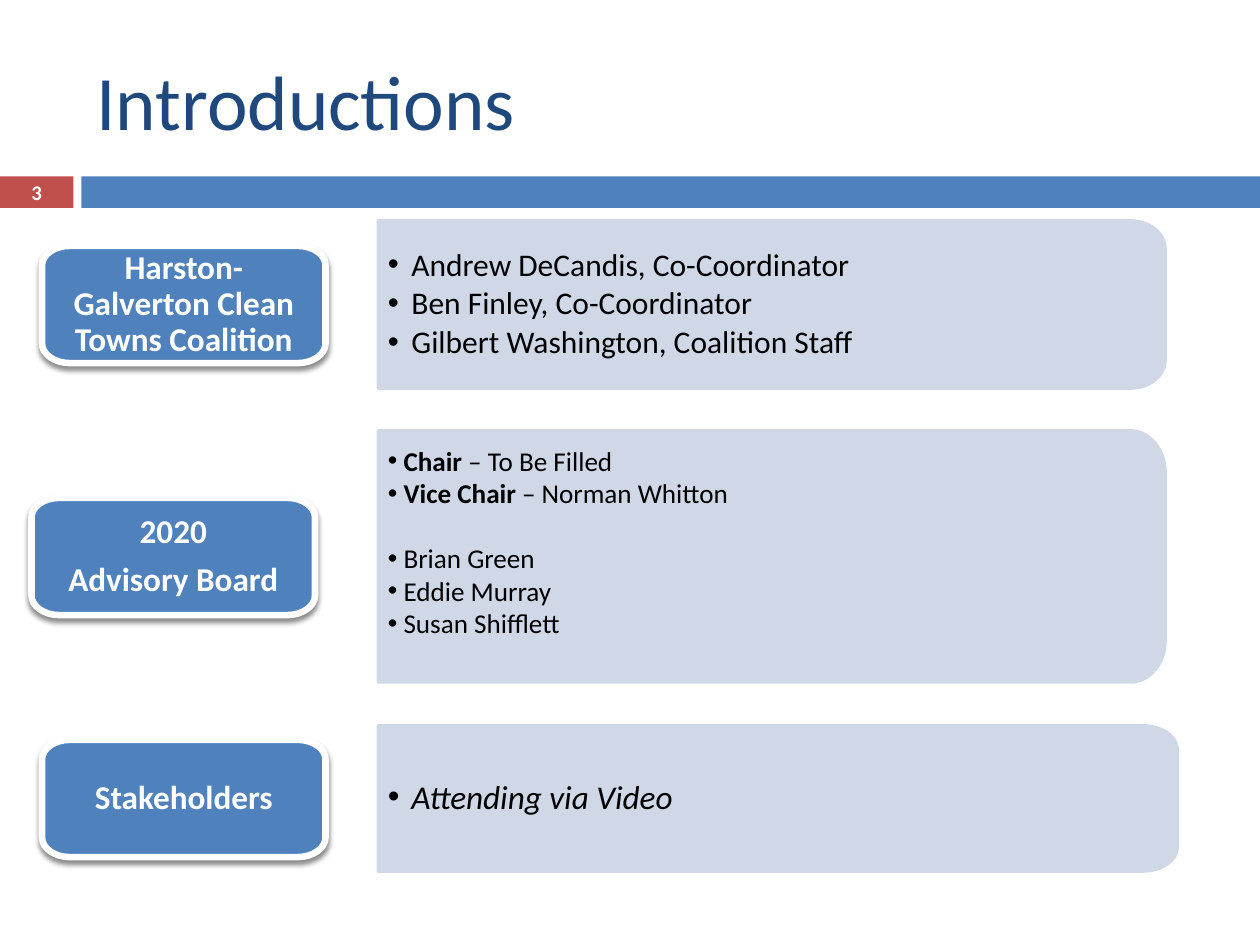
"""Build the Introductions slide with three labelled groups of people."""
from lxml.etree import SubElement
from pptx import Presentation
from pptx.dml.color import RGBColor
from pptx.enum.shapes import MSO_SHAPE as Preset
from pptx.enum.text import MSO_ANCHOR as Anchor, PP_ALIGN as Align
from pptx.oxml.ns import qn
from pptx.util import Pt

COLORS = {
    "title": "1F497D",
    "blue": "4F81BD",
    "red": "C0504D",
    "panel": "D0D8E8",
    "white": "FFFFFF",
    "black": "000000",
}
FONT = "Calibri"
BULLET_FONT = "Arial"
LABEL_SIZE = (162, 67)
PANEL_LEFT = 216
ARC = 0.55


def color(name):
    return RGBColor.from_string(COLORS[name])


def style_shape(shape, fill, line=None, width=0):
    shape.shadow.inherit = False
    shape.fill.solid()
    shape.fill.fore_color.rgb = color(fill)
    if line:
        shape.line.color.rgb = color(line)
        shape.line.width = Pt(width)
    else:
        shape.line.fill.background()


def style_text(frame, size, name, align=Align.LEFT, bold=False, italic=False):
    frame.word_wrap = True
    frame.vertical_anchor = Anchor.MIDDLE
    for para in frame.paragraphs:
        para.alignment = align
        for span in para.runs:
            span.font.name = FONT
            span.font.size = Pt(size)
            span.font.color.rgb = color(name)
            span.font.bold = bold
            span.font.italic = italic


def set_insets(frame, left, top, right, bottom):
    frame.margin_left, frame.margin_top = Pt(left), Pt(top)
    frame.margin_right, frame.margin_bottom = Pt(right), Pt(bottom)


def set_spacing(frame, after):
    for para in frame.paragraphs:
        para.line_spacing = 0.9
        para.space_after = Pt(after)


def add_bullets(frame, indent):
    for para in frame.paragraphs:
        props = para._p.get_or_add_pPr()
        props.set("marL", str(Pt(indent)))
        props.set("indent", str(-Pt(indent)))
        SubElement(props, qn("a:buFont"), typeface=BULLET_FONT)
        SubElement(props, qn("a:buChar"), char="•")


def curve_corner(lines):
    """Merge three line segments into one curve with the same points."""
    curve = lines[0].makeelement(qn("a:cubicBezTo"))
    lines[0].addprevious(curve)
    for line in lines:
        curve.append(line[0])
        line.getparent().remove(line)


def add_rounded(page, left, top, width, height, radius, round_left):
    """Draw a box whose elliptical corners are a sixth of its height."""
    rise, right, bottom = height / 6, left + width, top + height
    corners = [
        (right, top, (-radius, 0), (0, rise), True),
        (right, bottom, (0, -rise), (-radius, 0), True),
        (left, bottom, (radius, 0), (0, -rise), round_left),
        (left, top, (0, rise), (radius, 0), round_left),
    ]
    points, curves = [], []
    for x, y, enter, leave, rounded in corners:
        steps = [(0, 0)]
        if rounded:
            curves.append(len(points))
            pull = 1 - ARC
            steps = [enter, (enter[0] * pull, enter[1] * pull),
                     (leave[0] * pull, leave[1] * pull), leave]
        points += [(Pt(x + dx), Pt(y + dy)) for dx, dy in steps]
    builder = page.shapes.build_freeform(*points[0])
    builder.add_line_segments(points[1:], close=True)
    shape = builder.convert_to_shape()
    lines = list(shape._element.spPr.iter(qn("a:lnTo")))
    for start in curves:
        curve_corner(lines[start:start + 3])
    return shape


def add_bar(page, left, width, fill):
    bar = page.shapes.add_shape(Preset.RECTANGLE, Pt(left), Pt(100.8), Pt(width), Pt(18))
    style_shape(bar, fill)
    return bar


def add_title(page, text):
    title = page.shapes.title
    title.left, title.top, title.width, title.height = Pt(48), Pt(18), Pt(642), Pt(78)
    title.text_frame.text = text
    style_text(title.text_frame, 44, "title")


def add_panel(page, top, width, height):
    panel = add_rounded(page, PANEL_LEFT, top, width, height, 20, False)
    style_shape(panel, "panel", "panel", 1.5)
    set_insets(panel.text_frame, 5.6, 7, 10, 7)
    return panel.text_frame


def add_list(page, top, width, height, lines, size, italic=False):
    frame = add_panel(page, top, width, height)
    frame.text = "\n".join(lines)
    style_text(frame, size, "black", italic=italic)
    set_spacing(frame, 2.6)
    add_bullets(frame, 13.5)


def add_board(page, top, width, height, officers, members):
    frame = add_panel(page, top, width, height)
    frame.margin_bottom = Pt(24)
    frame.text = "\n".join([role for role, _ in officers] + members)
    for para, (_, holder) in zip(frame.paragraphs, officers):
        para.add_run().text = f" – {holder}"
    style_text(frame, 15.5, "black")
    for para in frame.paragraphs[:len(officers)]:
        para.runs[0].font.bold = True
    frame.paragraphs[len(officers)].space_before = Pt(18.6)
    add_bullets(frame, 9)


def add_label(page, left, top, text):
    label = add_rounded(page, left, top, *LABEL_SIZE, 16, True)
    style_shape(label, "blue", "white", 3.75)
    effects = label._element.spPr.find(qn("a:effectLst"))
    shadow = SubElement(effects, qn("a:outerShdw"), blurRad=str(Pt(3)),
                        dist=str(Pt(2.4)), dir="5400000", rotWithShape="0")
    tint = SubElement(shadow, qn("a:srgbClr"), val=COLORS["black"])
    SubElement(tint, qn("a:alpha"), val="45000")
    frame = label.text_frame
    frame.text = text
    set_insets(frame, 11, 8, 11, 8)
    style_text(frame, 19, "white", Align.CENTER, bold=True)
    set_spacing(frame, 6.6)


def main():
    deck = Presentation()
    deck.slide_width, deck.slide_height = Pt(720), Pt(540)
    page = deck.slides.add_slide(deck.slide_layouts[5])
    badge = add_bar(page, 0, 42, "red")
    badge.text_frame.text = "3"
    set_insets(badge.text_frame, 0, 0, 0, 0)
    style_text(badge.text_frame, 11.9, "white", Align.CENTER, bold=True)
    add_bar(page, 46.5, 673.5, "blue")
    add_title(page, "Introductions")

    staff = ["Andrew DeCandis, Co-Coordinator", "Ben Finley, Co-Coordinator",
             "Gilbert Washington, Coalition Staff"]
    add_list(page, 126, 450, 96, staff, 18)
    add_label(page, 24, 140.5, "Harston-Galverton Clean Towns Coalition")

    officers = [("Chair", "To Be Filled"), ("Vice Chair", "Norman Whitton")]
    members = ["Brian Green", "Eddie Murray", "Susan Shifflett"]
    add_board(page, 246, 450, 144, officers, members)
    add_label(page, 18, 284.5, "2020\nAdvisory Board")

    add_list(page, 414.5, 457, 83.5, ["Attending via Video"], 19, italic=True)
    add_label(page, 24, 422.8, "Stakeholders")
    deck.save("out.pptx")


if __name__ == "__main__":
    main()
